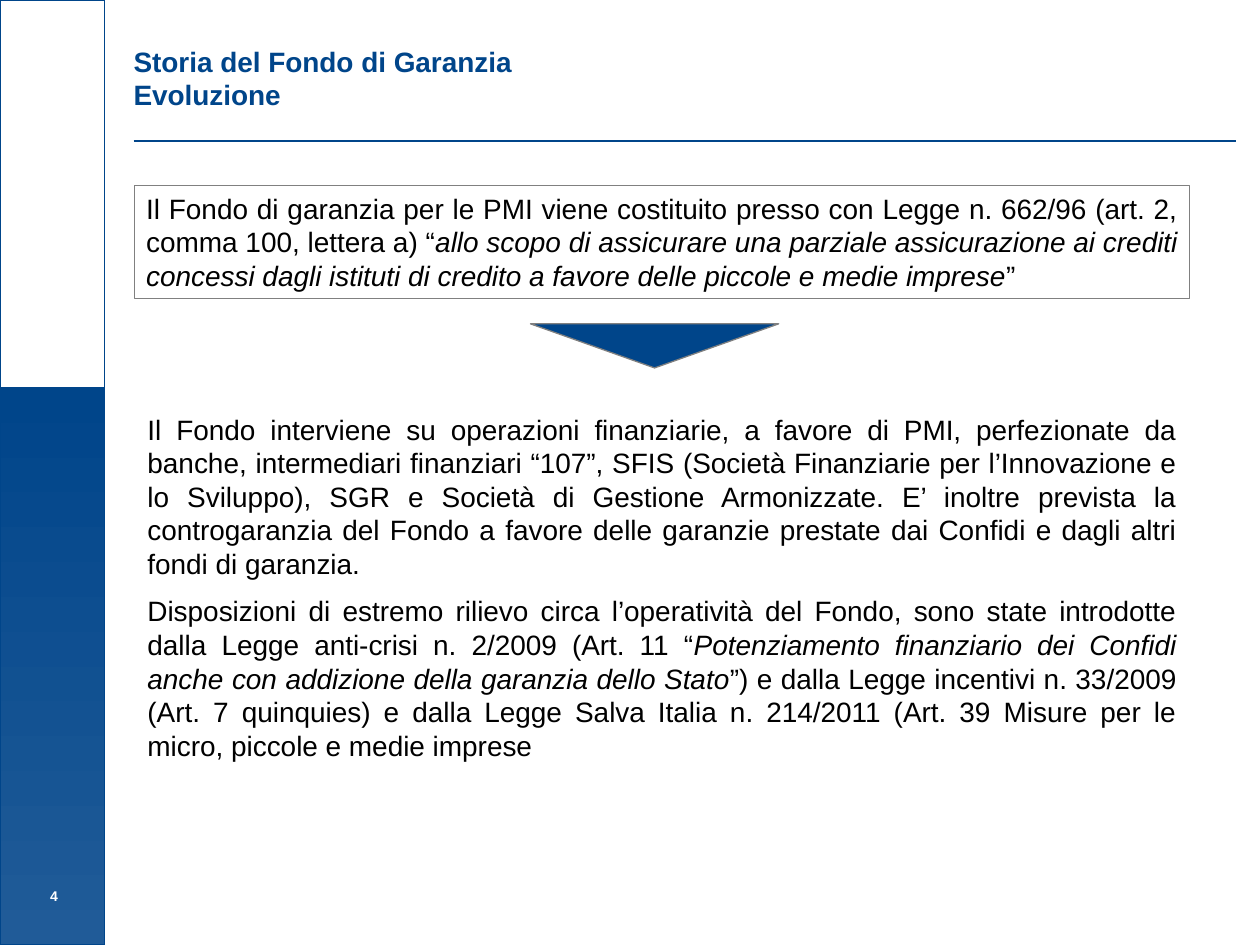
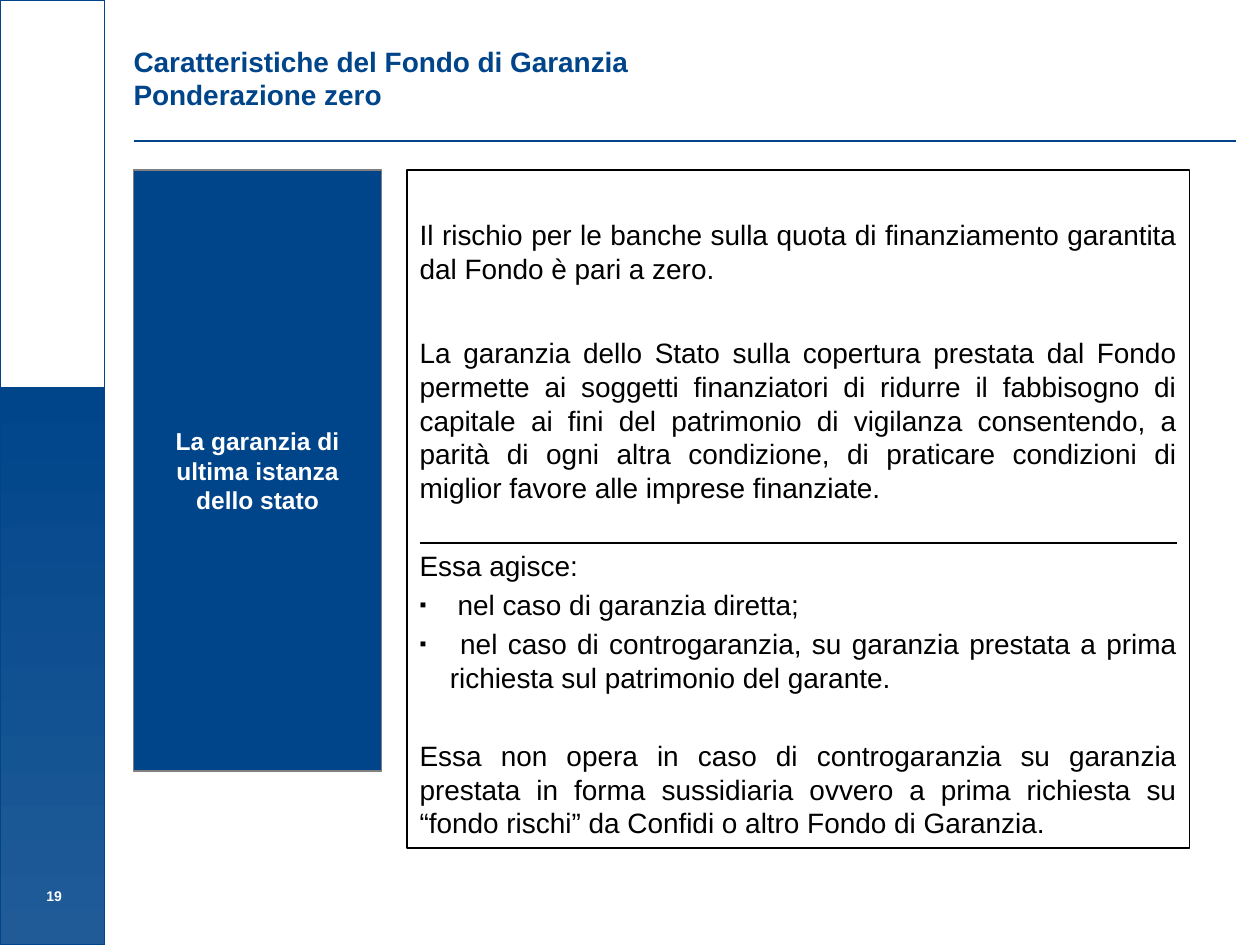
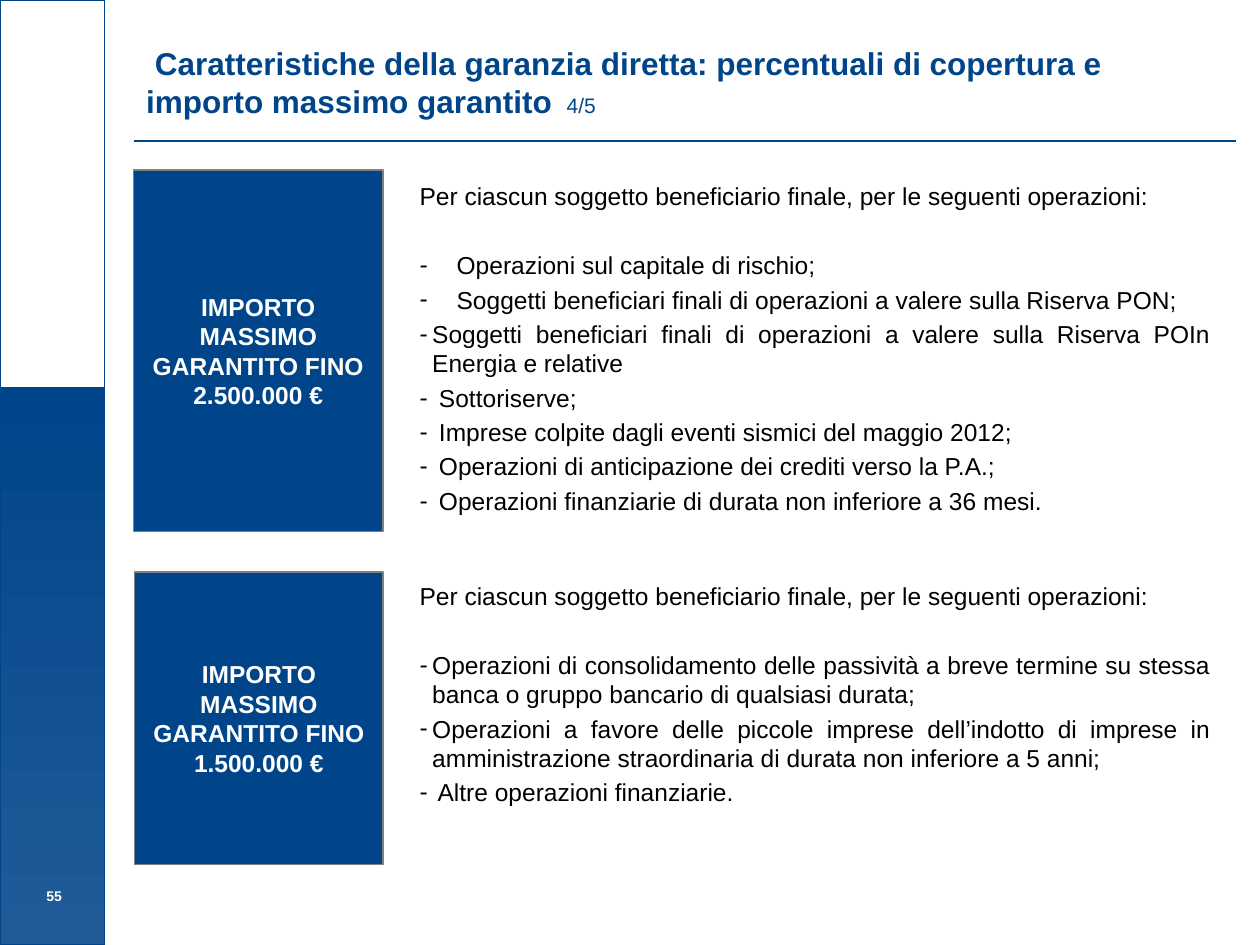
from lxml import etree
from pptx import Presentation
from pptx.dml.color import RGBColor
from pptx.enum.shapes import MSO_CONNECTOR, MSO_SHAPE
from pptx.enum.text import MSO_ANCHOR, MSO_AUTO_SIZE, PP_ALIGN
from pptx.oxml.ns import qn
from pptx.util import Inches, Pt

RECT = MSO_SHAPE.RECTANGLE
TRIANGLE = MSO_SHAPE.ISOSCELES_TRIANGLE
STRAIGHT = MSO_CONNECTOR.STRAIGHT
LEFT, CENTER, JUSTIFY = PP_ALIGN.LEFT, PP_ALIGN.CENTER, PP_ALIGN.JUSTIFY
TOP, MIDDLE, BOTTOM = MSO_ANCHOR.TOP, MSO_ANCHOR.MIDDLE, MSO_ANCHOR.BOTTOM

FONT = "Arial"
BLUE, FADE, GRAY, BLACK, WHITE = "00458A", "205B98", "808080", "000000", "FFFFFF"

# A paragraph is (runs, space before, bullet, indent); a run is (text, style).
ORIGIN = [([
    ("Il Fondo di garanzia per le PMI viene costituito presso con Legge n. 662/96 "
     "(art. 2, comma 100, lettera a) “", ""),
    ("allo scopo di assicurare una parziale assicurazione ai crediti concessi dagli "
     "istituti di credito a favore delle piccole e medie imprese", "i"),
    ("”", "")], 0, "", 0)]

SCOPE = [
    ([("Il Fondo interviene su operazioni finanziarie, a favore di PMI, perfezionate da "
       "banche, intermediari finanziari “107”, SFIS (Società Finanziarie per "
       "l’Innovazione e lo Sviluppo), SGR e Società di Gestione Armonizzate. E’ inoltre "
       "prevista la controgaranzia del Fondo a favore delle garanzie prestate dai Confidi "
       "e dagli altri fondi di garanzia.", "")], 0, "", 0),
    ([("Disposizioni di estremo rilievo circa l’operatività del Fondo, sono state "
       "introdotte dalla Legge anti-crisi n. 2/2009 (Art. 11 “", ""),
      ("Potenziamento finanziario dei Confidi anche con addizione della garanzia dello "
       "Stato", "i"),
      ("”) e dalla Legge incentivi n. 33/2009 (Art. 7 quinquies) e dalla Legge Salva "
       "Italia n. 214/2011 (Art. 39 Misure per le micro, piccole e medie imprese", "")],
     8, "", 0),
]

WEIGHT = [
    ([("Il rischio per le banche sulla quota di finanziamento garantita dal Fondo è pari "
       "a zero.", "")], 0, "", 0),
    ([("La garanzia dello Stato sulla copertura prestata dal Fondo permette ai soggetti "
       "finanziatori di ridurre il fabbisogno di capitale ai fini del patrimonio di "
       "vigilanza consentendo, a parità di ogni altra condizione, di praticare condizioni "
       "di miglior favore alle imprese finanziate.", "")], 29, "", 0),
    ([("Essa agisce:", "")], 25.5, "", 0),
    ([(" nel caso di garanzia diretta;", "")], 3.2, "▪", 0.24),
    ([(" nel caso di controgaranzia, su garanzia prestata a prima richiesta sul "
       "patrimonio del garante.", "")], 3.2, "▪", 0.24),
    ([("Essa non opera in caso di controgaranzia su garanzia prestata in forma "
       "sussidiaria ovvero a prima richiesta su “fondo rischi” da Confidi o altro Fondo "
       "di Garanzia.", "")], 25.5, "", 0),
]

INTRO = "Per ciascun soggetto beneficiario finale, per le seguenti operazioni:"
LIMITS = [
    {"sum": "2.500.000 €", "box": (1.06, 1.35, 1.98, 2.87), "list": (3.23, 1.39, 6.48, 2.83),
     "items": [
         (0.24, " Operazioni sul capitale di rischio;"),
         (0.24, " Soggetti beneficiari finali di operazioni a valere sulla Riserva PON;"),
         (0.1, "Soggetti beneficiari finali di operazioni a valere sulla Riserva POIn "
               "Energia e relative"),
         (0.1, " Sottoriserve;"),
         (0.1, " Imprese colpite dagli eventi sismici del maggio 2012;"),
         (0.1, " Operazioni di anticipazione dei crediti verso la P.A.;"),
         (0.1, " Operazioni finanziarie di durata non inferiore a 36 mesi."),
     ]},
    {"sum": "1.500.000 €", "box": (1.07, 4.54, 1.97, 2.32), "list": (3.23, 4.56, 6.48, 1.94),
     "items": [
         (0.1, "Operazioni di consolidamento delle passività a breve termine su stessa "
               "banca o gruppo bancario di qualsiasi durata;"),
         (0.1, "Operazioni a favore delle piccole imprese dell’indotto di imprese in "
               "amministrazione straordinaria di durata non inferiore a 5 anni;"),
         (0.1, " Altre operazioni finanziarie."),
     ]},
]


def rgb(color):
    return RGBColor.from_string(color)


def place(shape, spot):
    shape.left, shape.top, shape.width, shape.height = map(Inches, spot)


def mark(para, bullet, indent):
    """Set the hanging indent and the bullet, or switch the bullet off."""
    props = para._p.get_or_add_pPr()
    props.set("marL", str(Inches(indent)))
    props.set("indent", str(-Inches(indent)))
    if not bullet:
        etree.SubElement(props, qn("a:buNone"))
        return
    if bullet == "▪":
        etree.SubElement(props, qn("a:buSzPct")).set("val", "70000")
    etree.SubElement(props, qn("a:buFont")).set("typeface", FONT)
    etree.SubElement(props, qn("a:buChar")).set("char", bullet)


def write(shape, paras, size, color=BLACK, align=JUSTIFY, anchor=TOP, side=0.1, top=0.05):
    frame = shape.text_frame
    frame.word_wrap = True
    frame.auto_size = MSO_AUTO_SIZE.NONE
    frame.vertical_anchor = anchor
    frame.margin_left = frame.margin_right = Inches(side)
    frame.margin_top, frame.margin_bottom = Inches(top), Inches(0.05)
    for i, (runs, gap, bullet, indent) in enumerate(paras):
        para = frame.add_paragraph() if i else frame.paragraphs[0]
        mark(para, bullet, indent)
        para.alignment = align
        para.space_before = Pt(gap)
        for j, line in enumerate(runs):
            if line == "\n":
                para.add_line_break()
                continue
            text, style = line
            font_run = para.add_run()
            font_run.text = text
            font = font_run.font
            font.name, font.color.rgb = FONT, rgb(color)
            font.size = Pt(12 if "s" in style else size)
            font.bold, font.italic = "b" in style, "i" in style


def draw(slide, spot, fill=None, line=GRAY, kind=RECT):
    shape = slide.shapes.add_shape(kind, *map(Inches, spot))
    shape.shadow.inherit = False
    if fill:
        shape.fill.solid()
        shape.fill.fore_color.rgb = rgb(fill)
    else:
        shape.fill.background()
    shape.line.color.rgb, shape.line.width = rgb(line), Pt(0.75)
    return shape


def rule(slide, x1, x2, y, color, width):
    line = slide.shapes.add_connector(STRAIGHT, *map(Inches, (x1, y, x2, y)))
    line.line.color.rgb, line.line.width = rgb(color), Pt(width)
    etree.SubElement(line._element.spPr, qn("a:effectLst"))


def label(slide, spot, text):
    write(draw(slide, spot, BLUE), [([(text, "b")], 0, "", 0)], 14, WHITE, CENTER, MIDDLE, 0.09)


def start(deck, layout, number, runs, size=16, spot=(0.96, 0.3, 8.48, 0.69)):
    """Add a slide with its side band, title, title rule and number."""
    slide = deck.slides.add_slide(deck.slide_layouts[layout])
    rule(slide, 1.06, 9.81, 1.12, BLUE, 1.5)
    band = draw(slide, (0, 3.08, 0.83, 4.42), BLUE, BLUE)
    band.fill.gradient()
    band.fill.gradient_angle = 270
    for stop, color in zip(band.fill.gradient_stops, (BLUE, FADE)):
        stop.color.rgb = rgb(color)
    draw(slide, (0, 0, 0.83, 3.12), None, BLUE)
    page = slide.shapes.add_textbox(*map(Inches, (0, 6.73, 0.86, 0.5)))
    write(page, [([(number, "b")], 0, "", 0)], 8, WHITE, CENTER, BOTTOM)
    title = slide.shapes.title
    place(title, spot)
    write(title, [(runs, 0, "", 0)], size, BLUE, LEFT)
    return slide


def history(deck):
    slide = start(deck, 1, "4", [("Storia del Fondo di Garanzia", "b"), "\n", ("Evoluzione", "b")])
    body = slide.placeholders[1]
    place(body, (1.07, 3.22, 8.37, 2.64))
    write(body, SCOPE, 16)
    write(draw(slide, (1.07, 1.47, 8.37, 0.9)), ORIGIN, 16, side=0.09)
    draw(slide, (4.21, 2.57, 1.97, 0.35), BLUE, kind=TRIANGLE).rotation = 180


def weighting(deck):
    slide = start(deck, 1, "19", [("Caratteristiche del Fondo di Garanzia", "b"), "\n",
                                  ("Ponderazione zero", "b")])
    label(slide, (1.06, 1.35, 1.97, 4.77), "La garanzia di ultima istanza dello stato")
    body = slide.placeholders[1]
    place(body, (3.23, 1.35, 6.21, 5.38))
    body.line.color.rgb, body.line.width = rgb(BLACK), Pt(0.75)
    write(body, WEIGHT, 16, top=0.38)
    rule(slide, 3.33, 9.34, 4.31, BLACK, 1)


def limits(deck):
    slide = start(deck, 3, "55", [
        (" Caratteristiche della garanzia diretta: percentuali di copertura e importo "
         "massimo garantito ", "b"), (" 4/5", "s")], 18, (1.06, 0.3, 8.27, 1.05))
    for holder in list(slide.placeholders)[3:]:
        holder._element.getparent().remove(holder._element)
    bodies = list(slide.placeholders)[1:]
    for limit, body in zip(LIMITS, bodies):
        label(slide, limit["box"], "IMPORTO MASSIMO GARANTITO FINO " + limit["sum"])
        place(body, limit["list"])
        paras = [([(INTRO, "")], 0, "", 0)]
        for i, (indent, text) in enumerate(limit["items"]):
            paras.append(([(text, "")], 2.8 if i else 22.6, "-", indent))
        write(body, paras, 14)


def main():
    deck = Presentation()
    deck.slide_width, deck.slide_height = Inches(10), Inches(7.5)
    history(deck)
    weighting(deck)
    limits(deck)
    deck.save("out.pptx")


if __name__ == "__main__":
    main()
